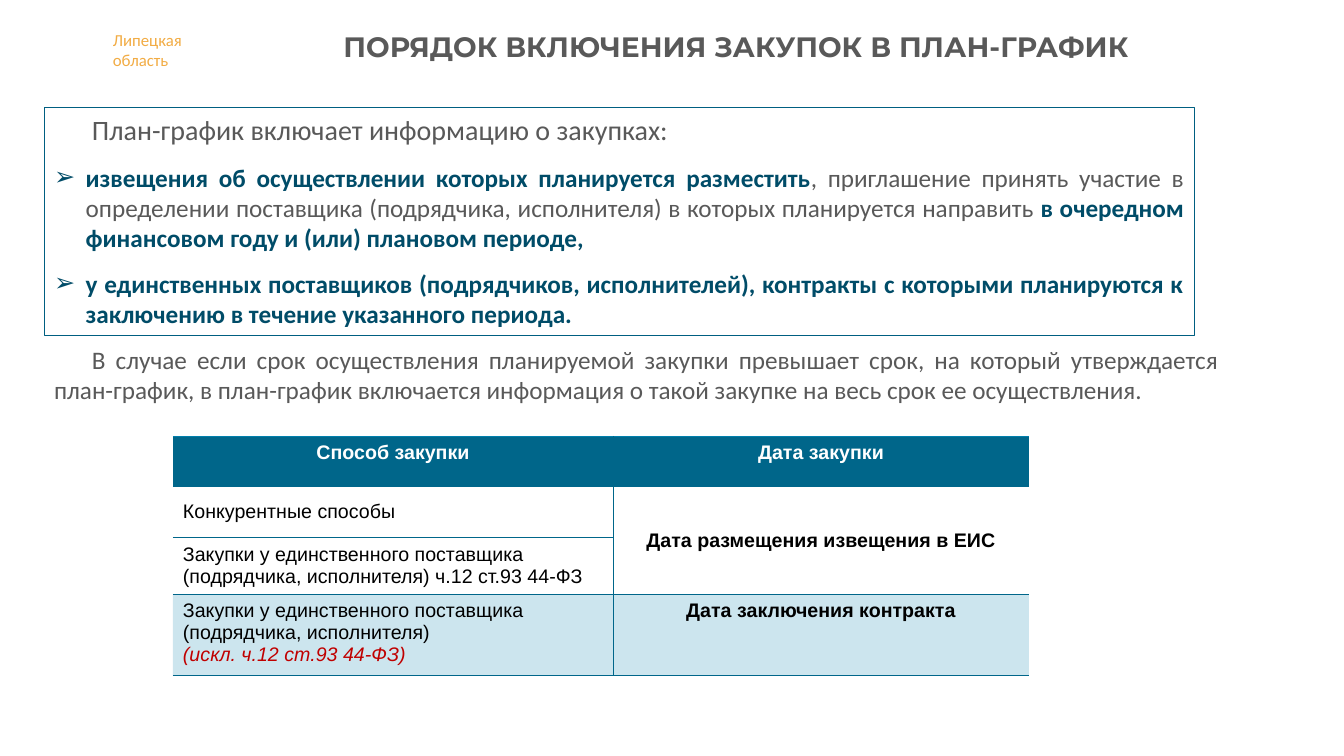
import pptx
import pptx.dml.color
import pptx.enum.text
import pptx.oxml
import pptx.oxml.ns
import pptx.util
from lxml import etree

Pt = pptx.util.Pt
ALIGN = pptx.enum.text.PP_ALIGN
ANCHOR = pptx.enum.text.MSO_ANCHOR

GREY, NAVY, TEAL, BLUE = "595959", "004C68", "00668A", "007FAC"
WHITE, BLACK, RED, AMBER = "FFFFFF", "000000", "C00000", "F2AC44"

REGION = ["Липецкая", "область"]
TITLE = "ПОРЯДОК ВКЛЮЧЕНИЯ ЗАКУПОК В ПЛАН-ГРАФИК"
INTRO = "План-график включает информацию о закупках:"
# Each item is a list of (text, emphasised)
ITEMS = [
    [("извещения об осуществлении которых планируется разместить", True),
     (", приглашение принять участие в определении поставщика (подрядчика, "
      "исполнителя) в которых планируется направить ", False),
     ("в очередном финансовом году и (или) плановом периоде,", True)],
    [("у единственных поставщиков (подрядчиков, исполнителей), контракты с "
      "которыми планируются к заключению в течение указанного периода.", True)],
]
NOTE = ("В случае если срок осуществления планируемой закупки превышает срок, "
        "на который утверждается план-график, в план-график включается "
        "информация о такой закупке на весь срок ее осуществления.")

HEADERS = ["Способ закупки", "Дата закупки"]
METHODS = [
    "Конкурентные способы",
    "Закупки у единственного поставщика (подрядчика, исполнителя) ч.12 ст.93 44-ФЗ",
    "Закупки у единственного поставщика (подрядчика, исполнителя)",
]
EXCEPTION = "(искл. ч.12 ст.93 44-ФЗ)"
NOTICE_DATE = "Дата размещения извещения в ЕИС"
CONTRACT_DATE = "Дата заключения контракта"
COL_WIDTHS = [314.5, 297]
ROW_HEIGHTS = [36, 36, 41, 58]


def rgb(value):
    return pptx.dml.color.RGBColor.from_string(value)


def add_run(p, text, size=18, font="Calibri", color=GREY, bold=False, italic=False):
    r = p.add_run()
    r.text = text
    f = r.font
    f.size, f.name, f.bold, f.italic = Pt(size), font, bold, italic
    f.color.rgb = rgb(color)


def add_paragraph(tf, text="", align=ALIGN.LEFT, before=0, left=0, indent=0,
                  bullet=None, **run_format):
    """Fill the empty first paragraph of a frame, or append a new one."""
    p = tf.paragraphs[0]
    if p.runs:
        p = tf.add_paragraph()
    p.alignment, p.space_before = align, Pt(before)
    pPr = p._p.get_or_add_pPr()
    pPr.set("marL", str(Pt(left)))
    pPr.set("indent", str(Pt(indent)))
    if bullet:
        etree.SubElement(pPr, pptx.oxml.ns.qn("a:buFont")).set("typeface", "Arial")
        etree.SubElement(pPr, pptx.oxml.ns.qn("a:buChar")).set("char", bullet)
    else:
        etree.SubElement(pPr, pptx.oxml.ns.qn("a:buNone"))
    if text:
        add_run(p, text, **run_format)
    return p


def place(sp, left, top, width, height, anchor=ANCHOR.TOP):
    sp.left, sp.top, sp.width, sp.height = Pt(left), Pt(top), Pt(width), Pt(height)
    tf = sp.text_frame
    tf.word_wrap, tf.vertical_anchor = True, anchor
    tf.auto_size = pptx.enum.text.MSO_AUTO_SIZE.NONE
    return tf


def add_textbox(slide, *box):
    return place(slide.shapes.add_textbox(0, 0, 0, 0), *box)


def fill_cell(cell, color, alpha=None):
    cell.fill.solid()
    cell.fill.fore_color.rgb = rgb(color)
    if alpha:
        clr = cell._tc.tcPr.find(".//" + pptx.oxml.ns.qn("a:srgbClr"))
        etree.SubElement(clr, pptx.oxml.ns.qn("a:alpha")).set("val", str(alpha * 1000))


def border_cell(cell, colors):
    """Set the left, right, top and bottom borders; None hides one."""
    for i, (side, color) in enumerate(zip("LRTB", colors)):
        paint = (f'<a:solidFill><a:srgbClr val="{color}"/></a:solidFill>'
                 if color else "<a:noFill/>")
        ln = pptx.oxml.parse_xml(
            f'<a:ln{side} {pptx.oxml.ns.nsdecls("a")} w="{Pt(1)}">{paint}</a:ln{side}>')
        cell._tc.get_or_add_tcPr().insert(i, ln)


def add_dates_table(slide):
    frame = slide.shapes.add_table(
        len(ROW_HEIGHTS), len(COL_WIDTHS), Pt(123.5), Pt(311.75),
        Pt(sum(COL_WIDTHS)), Pt(sum(ROW_HEIGHTS)))
    table = frame.table
    table.first_row = table.horz_banding = False
    for col, width in zip(table.columns, COL_WIDTHS):
        col.width = Pt(width)
    for row, height in zip(table.rows, ROW_HEIGHTS):
        row.height = Pt(height)
    table.cell(1, 1).merge(table.cell(2, 1))

    arial = dict(size=14, font="Arial")
    for c, header in enumerate(HEADERS):
        add_paragraph(table.cell(0, c).text_frame, header, align=ALIGN.CENTER,
                      color=WHITE, bold=True, **arial)
    for r, method in enumerate(METHODS, start=1):
        add_paragraph(table.cell(r, 0).text_frame, method, color=BLACK, **arial)
    add_paragraph(table.cell(3, 0).text_frame, EXCEPTION, color=RED, italic=True, **arial)
    for r, date in ((1, NOTICE_DATE), (3, CONTRACT_DATE)):
        add_paragraph(table.cell(r, 1).text_frame, date, align=ALIGN.CENTER,
                      color=BLACK, bold=True, **arial)

    fills = [(TEAL,), (WHITE,), (WHITE,), (BLUE, 20)]
    for r, fill in enumerate(fills):
        for c in range(len(COL_WIDTHS)):
            cell = table.cell(r, c)
            fill_cell(cell, *fill)
            cell.vertical_anchor = ANCHOR.MIDDLE if r in (1, 2) else ANCHOR.TOP
            if not cell.is_spanned:
                border_cell(cell, (TEAL if c else None, None if c else TEAL,
                                   TEAL if r else BLUE, TEAL))


def main():
    prs = pptx.Presentation()
    prs.slide_width, prs.slide_height = Pt(960), Pt(540)
    slide = prs.slides.add_slide(prs.slide_layouts[1])

    tf = add_textbox(slide, 73.5, 17.5, 65.5, 36)
    for line in REGION:
        add_paragraph(tf, line, size=12, color=AMBER)

    tf = place(slide.shapes.title, 115, 17.5, 821.5, 31.5, ANCHOR.MIDDLE)
    add_paragraph(tf, TITLE, align=ALIGN.CENTER, size=20, font="Montserrat", bold=True)

    body = slide.placeholders[1]
    tf = place(body, 31.5, 77, 821.5, 163)
    body.line.color.rgb = rgb("005F81")
    body.line.width = Pt(0.75)
    add_paragraph(tf, INTRO, align=ALIGN.JUSTIFY, indent=27, size=20)
    for item in ITEMS:
        p = add_paragraph(tf, align=ALIGN.JUSTIFY, before=11, left=22.5,
                          indent=-22.5, bullet="➢")
        for text, strong in item:
            add_run(p, text, color=NAVY if strong else GREY, bold=strong)

    tf = add_textbox(slide, 31.5, 242.5, 846, 51)
    add_paragraph(tf, NOTE, align=ALIGN.JUSTIFY, indent=27)

    add_dates_table(slide)
    prs.save("out.pptx")


if __name__ == "__main__":
    main()
